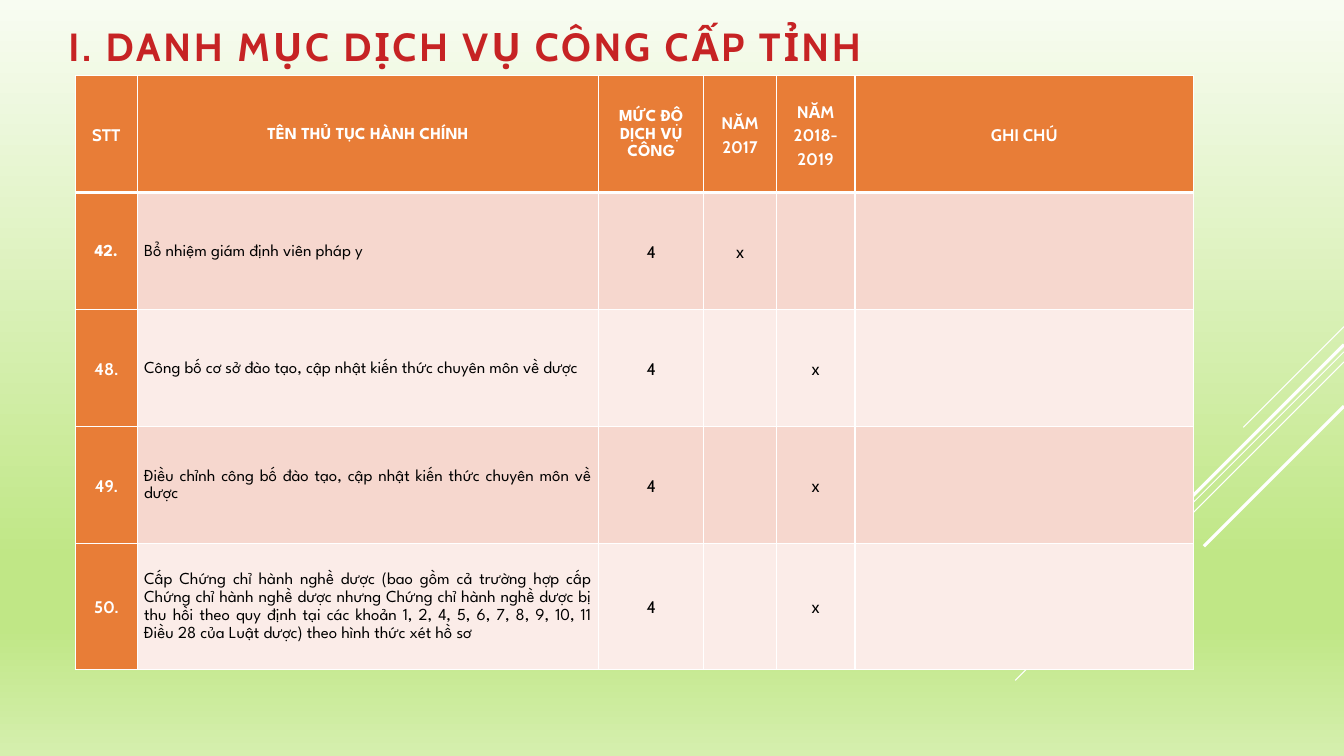
from dataclasses import dataclass

from lxml.etree import SubElement
from pptx import Presentation
from pptx.dml.color import RGBColor
from pptx.enum.text import MSO_ANCHOR, PP_ALIGN
from pptx.oxml import parse_xml
from pptx.oxml.ns import nsdecls, qn
from pptx.util import Inches, Pt


@dataclass(frozen=True)
class Theme:
    white: str = "FFFFFF"
    black: str = "000000"
    title: str = "C62324"
    accent: str = "E87D37"
    bands: tuple = ("F6D7CE", "FBECE8")
    backdrop: tuple = ((0, "F8FCF2"), (74, "C0E786"), (83, "C0E786"), (100, "D5EFAE"))
    heading_font: str = "Cabin"
    body_font: str = "League Spartan"
    title_size: int = 28
    table_size: int = 12


THEME = Theme()
COLUMN_WIDTHS = (0.61, 4.58, 1.04, 0.72, 0.78, 3.36)
ROW_HEIGHTS = (1.16, 1.16, 1.16, 1.16, 1.25)
HEADINGS = ("STT", "TÊN THỦ TỤC HÀNH CHÍNH", "MỨC ĐỘ DỊCH VỤ CÔNG",
            "NĂM 2017", "NĂM 2018-2019", "GHI CHÚ")
PROCEDURES = (
    ("42.", "Bổ nhiệm giám định viên pháp y", "4", "x", "", ""),
    ("48.", "Công bố cơ sở đào tạo, cập nhật kiến thức chuyên môn về dược",
     "4", "", "x", ""),
    ("49.", "Điều chỉnh công bố đào tạo, cập nhật kiến thức chuyên môn về dược",
     "4", "", "x", ""),
    ("50.", "Cấp Chứng chỉ hành nghề dược (bao gồm cả trường hợp cấp Chứng chỉ "
     "hành nghề dược nhưng Chứng chỉ hành nghề dược bị thu hồi theo quy định tại "
     "các khoản 1, 2, 4, 5, 6, 7, 8, 9, 10, 11 Điều 28 của Luật dược) theo hình "
     "thức xét hồ sơ", "4", "", "x", ""),
)
# Each ray: start height on the right edge, horizontal run at 45 degrees, weight
RAYS = ((3.24, 1, 0.75), (3.49, 3.26, 0.75), (3.59, 2.07, 0.75),
        (3.42, 1.91, 2.25), (4.03, 1.39, 2.25))


def set_attributes(target, values):
    for name, value in values.items():
        setattr(target, name, value)


def write_text(frame, text, font, size, color, bold, paragraph_format):
    set_attributes(frame, {"word_wrap": True, "vertical_anchor": MSO_ANCHOR.MIDDLE})
    paragraph = frame.paragraphs[0]
    set_attributes(paragraph, paragraph_format)
    run = paragraph.add_run()
    run.text = text
    set_attributes(run.font, {"name": font, "size": Pt(size), "bold": bold})
    run.font.color.rgb = RGBColor.from_string(color)
    return run


def paint_background(slide):
    fill = slide.background.fill
    fill.gradient()
    fill.gradient_angle = 270
    stops = slide.element.find(".//" + qn("a:gsLst"))
    for stop in list(stops):
        stops.remove(stop)
    for percent, color in THEME.backdrop:
        stop = SubElement(stops, qn("a:gs"), pos=str(percent * 1000))
        SubElement(stop, qn("a:srgbClr"), val=color)


def add_rays(slide, right):
    for top, run, weight in RAYS:
        ray = slide.shapes.add_connector(
            1, Inches(right), Inches(top), Inches(right - run), Inches(top + run))
        ray.line.color.rgb = RGBColor.from_string(THEME.white)
        ray.line.width = Pt(weight)
        SubElement(ray.element.spPr, qn("a:effectLst"))


def add_title(slide, left, top, width, height):
    title = slide.shapes.add_textbox(*map(Inches, (left, top, width, height)))
    run = write_text(title.text_frame, "I. DANH MỤC DỊCH VỤ CÔNG CẤP TỈNH",
                     THEME.heading_font, THEME.title_size, THEME.title, True,
                     {"line_spacing": 0.9})
    run.font._element.set("spc", "200")


def set_borders(cell, weights):
    """Draw white borders, given as points for left, right, top and bottom."""
    properties = cell._tc.get_or_add_tcPr()
    for index, (side, weight) in enumerate(zip("LRTB", weights)):
        properties.insert(index, parse_xml(
            f'<a:ln{side} {nsdecls("a")} w="{Pt(weight)}"><a:solidFill>'
            f'<a:srgbClr val="{THEME.white}"/></a:solidFill></a:ln{side}>'))


def format_cell(cell, text, row, column):
    is_header, is_number, is_name = row == 0, column == 0, column == 1
    strong = is_header or is_number
    fill = THEME.accent if strong else THEME.bands[(row - 1) % 2]
    cell.fill.solid()
    cell.fill.fore_color.rgb = RGBColor.from_string(fill)
    set_borders(cell, (1, 1, 3 if row == 1 else 1, 3 if is_header else 1))
    set_attributes(cell, {"margin_left": Inches(0.07), "margin_right": Inches(0.07),
                          "margin_top": 0, "margin_bottom": 0,
                          "vertical_anchor": MSO_ANCHOR.MIDDLE})
    if not text:
        return
    uses_body_font = is_name or (row, column) in ((0, 2), (1, 0))
    layout = {"alignment": PP_ALIGN.CENTER, "line_spacing": 1.15}
    if not is_header and (is_number or is_name):
        layout |= {"space_before": Pt(6), "space_after": Pt(6)}
    if not is_header and is_name:
        layout["alignment"] = PP_ALIGN.JUSTIFY
    write_text(cell.text_frame, text,
               THEME.body_font if uses_body_font else THEME.heading_font,
               THEME.table_size, THEME.white if strong else THEME.black,
               strong, layout)


def add_procedures(slide, left, top, width, height):
    rows = (HEADINGS, *PROCEDURES)
    table = slide.shapes.add_table(
        len(rows), len(HEADINGS), *map(Inches, (left, top, width, height))).table
    set_attributes(table, {"first_row": False, "horz_banding": False})
    for column, column_width in zip(table.columns, COLUMN_WIDTHS):
        column.width = Inches(column_width)
    for row, row_height in zip(table.rows, ROW_HEIGHTS):
        row.height = Inches(row_height)
    for row, texts in enumerate(rows):
        for column, text in enumerate(texts):
            format_cell(table.cell(row, column), text, row, column)


def main():
    deck = Presentation()
    set_attributes(deck, {"slide_width": Inches(13.33), "slide_height": Inches(7.5)})
    slide = deck.slides.add_slide(deck.slide_layouts[6])
    paint_background(slide)
    add_rays(slide, 13.33)
    add_title(slide, 0.58, 0.22, 11.13, 0.53)
    add_procedures(slide, 0.75, 0.75, sum(COLUMN_WIDTHS), sum(ROW_HEIGHTS))
    deck.save("out.pptx")


if __name__ == "__main__":
    main()
